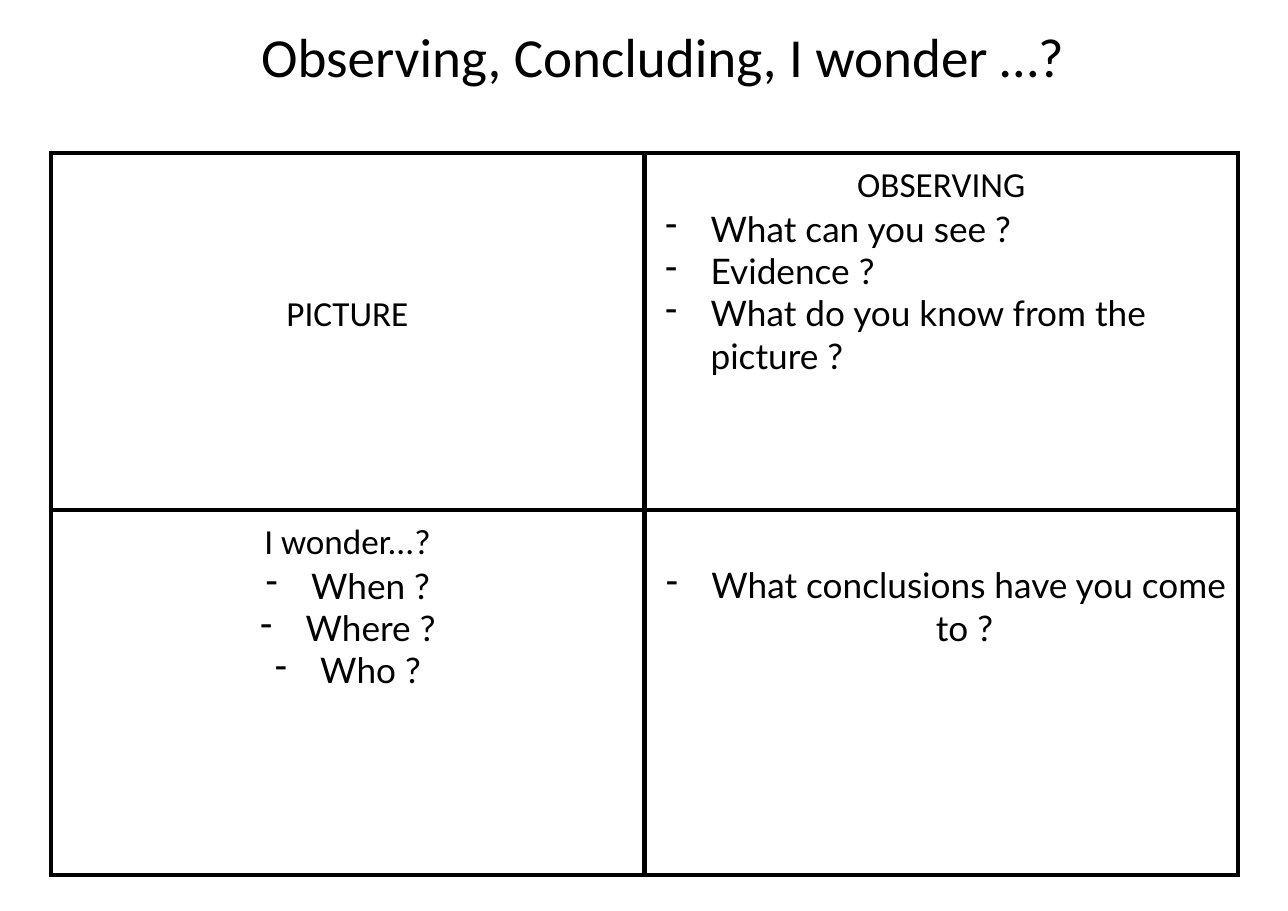
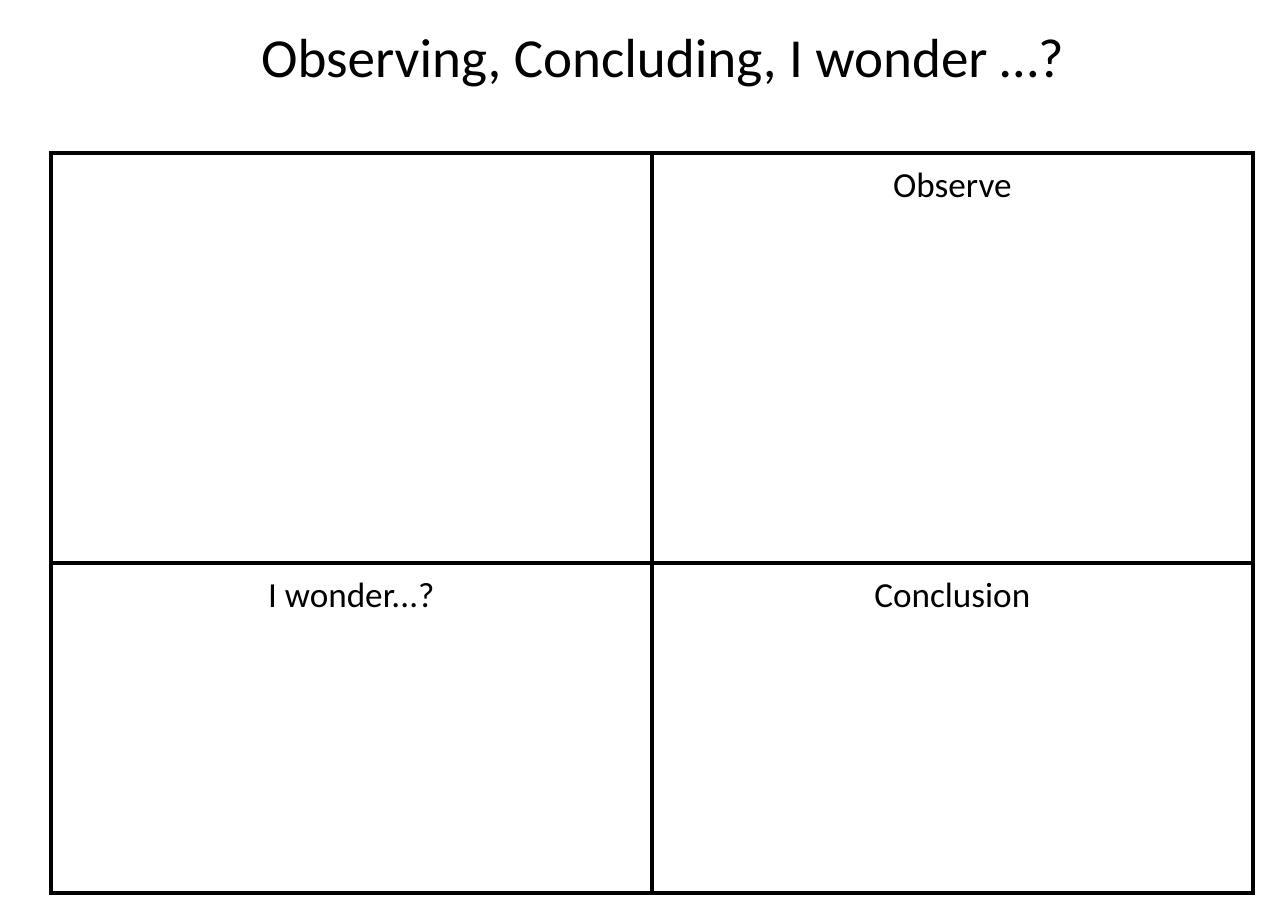
from dataclasses import dataclass

from lxml.etree import SubElement
from pptx import Presentation
from pptx.dml.color import RGBColor
from pptx.enum.text import MSO_ANCHOR, PP_ALIGN
from pptx.oxml.ns import qn
from pptx.util import Inches, Pt

BLACK = "000000"
HEADING_FONT, BULLET_FONT = "Calibri", "Lato"
TITLE = "Observing, Concluding, I wonder …?"
TITLE_SIZE, CELL_SIZE = 36, 23
BORDER_WIDTH = 3
INSET = 0.1
LINE_HEIGHT = 0.39
TABLE_LEFT, TABLE_TOP = 0.46, 1.39


@dataclass(frozen=True)
class Panel:
    heading: str = ""
    bullets: tuple[str, ...] = ()
    bullet_align: PP_ALIGN = PP_ALIGN.CENTER
    lines_down: int = 0  # how many text lines the content starts below the top


@dataclass(frozen=True)
class Worksheet:
    column_widths: tuple[float, float]
    row_heights: tuple[float, float]
    panels: tuple[tuple[Panel, Panel], tuple[Panel, Panel]]


WORKSHEETS = (
    Worksheet((5.39, 5.39), (3.24, 3.31), (
        (Panel("PICTURE", lines_down=3),
         Panel("OBSERVING",
               ("What can you see ?", "Evidence ?", "What do you know from the picture ?"),
               PP_ALIGN.LEFT)),
        (Panel("I wonder...?", ("When ? ", "Where ? ", "Who ? ")),
         Panel(bullets=("What conclusions have you come to ? ",), lines_down=1)),
    )),
    Worksheet((5.46, 5.45), (3.72, 3.0), (
        (Panel(), Panel("Observe")),
        (Panel("I wonder...?"), Panel("Conclusion")),
    )),
)


def color(value: str) -> RGBColor:
    return RGBColor.from_string(value)


def add_run(paragraph, text: str, font_name: str, size: float) -> None:
    run = paragraph.add_run()
    run.text = text
    run.font.name = font_name
    run.font.size = Pt(size)
    run.font.color.rgb = color(BLACK)


def set_bullet(paragraph) -> None:
    properties = paragraph._p.get_or_add_pPr()
    properties.set("marL", str(Inches(0.5)))
    properties.set("indent", str(Inches(-0.41)))
    bullet_color = SubElement(properties, qn("a:buClr"))
    SubElement(bullet_color, qn("a:srgbClr")).set("val", BLACK)
    SubElement(properties, qn("a:buChar")).set("char", "-")


def set_borders(cell) -> None:
    properties = cell._tc.get_or_add_tcPr()
    for side in ("lnL", "lnR", "lnT", "lnB"):
        line = SubElement(properties, qn(f"a:{side}"), w=str(Pt(BORDER_WIDTH)))
        fill = SubElement(line, qn("a:solidFill"))
        SubElement(fill, qn("a:srgbClr")).set("val", BLACK)


def add_title(slide) -> None:
    box = slide.shapes.add_textbox(Inches(0.34), Inches(0.07), Inches(11.35), Inches(0.87))
    frame = box.text_frame
    frame.word_wrap = True
    frame.vertical_anchor = MSO_ANCHOR.MIDDLE
    frame.margin_left = frame.margin_right = Inches(INSET)
    frame.margin_top = frame.margin_bottom = Inches(INSET)
    paragraph = frame.paragraphs[0]
    paragraph.alignment = PP_ALIGN.CENTER
    add_run(paragraph, TITLE, HEADING_FONT, TITLE_SIZE)


def fill_cell(cell, panel: Panel) -> None:
    set_borders(cell)
    cell.fill.background()
    cell.margin_left = cell.margin_right = cell.margin_bottom = Inches(INSET)
    cell.margin_top = Inches(INSET + panel.lines_down * LINE_HEIGHT)
    frame = cell.text_frame
    paragraph = frame.paragraphs[0]
    if panel.heading:
        paragraph.alignment = PP_ALIGN.CENTER
        add_run(paragraph, panel.heading, HEADING_FONT, CELL_SIZE)
    for index, text in enumerate(panel.bullets):
        if panel.heading or index:
            paragraph = frame.add_paragraph()
        paragraph.alignment = panel.bullet_align
        set_bullet(paragraph)
        add_run(paragraph, text, BULLET_FONT, CELL_SIZE)


def add_panels(slide, worksheet: Worksheet) -> None:
    widths, heights = worksheet.column_widths, worksheet.row_heights
    table = slide.shapes.add_table(
        len(heights), len(widths), Inches(TABLE_LEFT), Inches(TABLE_TOP),
        Inches(sum(widths)), Inches(sum(heights))).table
    table.first_row = table.horz_banding = False
    for column, width in zip(table.columns, widths):
        column.width = Inches(width)
    for row, height, panels in zip(table.rows, heights, worksheet.panels):
        row.height = Inches(height)
        for cell, panel in zip(row.cells, panels):
            fill_cell(cell, panel)


def main() -> None:
    presentation = Presentation()
    presentation.slide_width, presentation.slide_height = Inches(11.69), Inches(8.27)
    blank_layout = presentation.slide_layouts[6]
    for worksheet in WORKSHEETS:
        slide = presentation.slides.add_slide(blank_layout)
        add_title(slide)
        add_panels(slide, worksheet)
    presentation.save("out.pptx")


if __name__ == "__main__":
    main()
